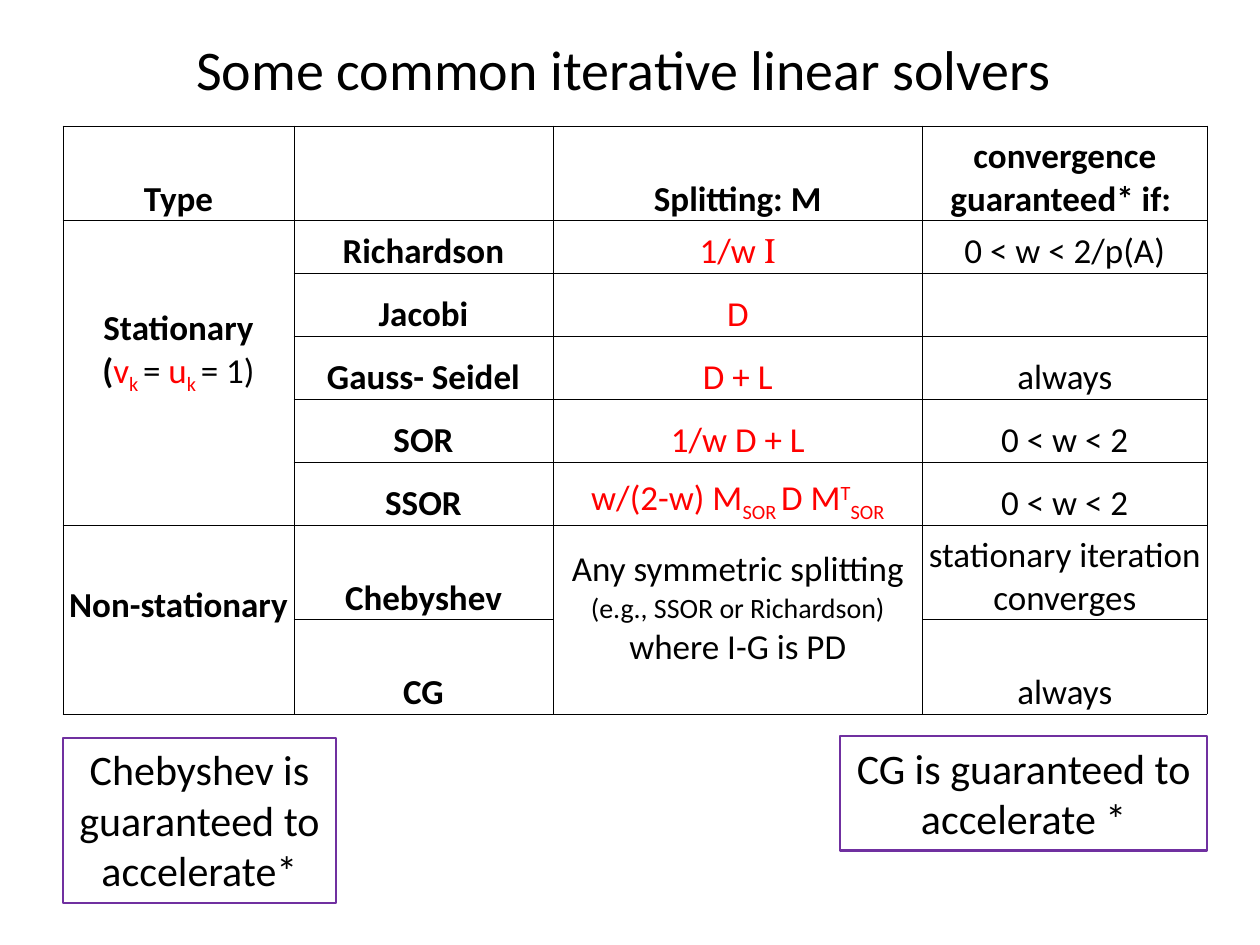
"""Build a slide that compares common iterative linear solvers."""
from lxml import etree
from pptx import Presentation
from pptx import util as u
from pptx.dml.color import RGBColor
from pptx.enum import shapes, text
from pptx.oxml.ns import qn

COLORS = {"text": "000000", "math": "FF0000", "box": "7030A0", "border": "000000"}


class Deck:
    """Hold the style and the current slide."""

    font = "Calibri"

    def __init__(self, width, height):
        self.prs = Presentation()
        self.prs.slide_width, self.prs.slide_height = u.Pt(width), u.Pt(height)
        self.s = self.prs.slides.add_slide(self.prs.slide_layouts[5])

    def add_text(self, tf, paragraphs, size):
        """Fill a text frame with centred paragraphs of (text, options) runs."""
        tf.word_wrap = True
        for i, runs in enumerate(paragraphs):
            p = tf.add_paragraph() if i else tf.paragraphs[0]
            p.alignment = text.PP_ALIGN.CENTER
            for content, opts in runs:
                r = p.add_run()
                r.text = content
                r.font.name = opts.get("font", self.font)
                r.font.size = u.Pt(opts.get("size", size))
                r.font.bold = opts.get("bold", False)
                r.font.color.rgb = RGBColor.from_string(COLORS[opts.get("color", "text")])
                if "base" in opts:
                    r._r.get_or_add_rPr().set("baseline", str(opts["base"] * 1000))

    def title(self, content, x, y, w, h):
        """Place and fill the title placeholder."""
        sp = self.s.shapes.title
        sp.left, sp.top, sp.width, sp.height = map(u.Pt, (x, y, w, h))
        sp.text_frame.vertical_anchor = text.MSO_ANCHOR.MIDDLE
        self.add_text(sp.text_frame, [[(content, {})]], 32)

    def box(self, content, x, y, w, h):
        """Add an outlined note."""
        sp = self.s.shapes.add_shape(shapes.MSO_SHAPE.RECTANGLE, *map(u.Pt, (x, y, w, h)))
        sp.shadow.inherit = False
        sp.fill.background()
        sp.line.color.rgb = RGBColor.from_string(COLORS["box"])
        sp.line.width = u.Pt(1.25)
        tf = sp.text_frame
        tf.vertical_anchor = text.MSO_ANCHOR.TOP
        self.add_text(tf, [[(content, {})]], 24)
        tf.auto_size = text.MSO_AUTO_SIZE.SHAPE_TO_FIT_TEXT

    def border(self, cell):
        """Draw a thin line on every side of a cell."""
        tc_pr = cell._tc.get_or_add_tcPr()
        for i, side in enumerate(("a:lnL", "a:lnR", "a:lnT", "a:lnB")):
            ln = etree.Element(qn(side), w=str(u.Pt(0.5)))
            fill = etree.SubElement(ln, qn("a:solidFill"))
            etree.SubElement(fill, qn("a:srgbClr"), val=COLORS["border"])
            tc_pr.insert(i, ln)

    def table(self, rows, x, y, widths, heights, merges):
        """Add a bordered table; merges give first row, last row, column, bottom margin."""
        area = map(u.Pt, (x, y, sum(widths), sum(heights)))
        tbl = self.s.shapes.add_table(len(heights), len(widths), *area).table
        tbl.first_row = tbl.horz_banding = False
        for col, width in zip(tbl.columns, widths):
            col.width = u.Pt(width)
        for row, height, contents in zip(tbl.rows, heights, rows):
            row.height = u.Pt(height)
            for cell, paragraphs in zip(row.cells, contents):
                cell.fill.background()
                self.border(cell)
                cell.vertical_anchor = text.MSO_ANCHOR.BOTTOM
                cell.margin_left = cell.margin_right = cell.margin_top = u.Pt(0.75)
                cell.margin_bottom = 0
                self.add_text(cell.text_frame, paragraphs, 20)
        for first, last, col, margin in merges:
            tbl.cell(first, col).merge(tbl.cell(last, col))
            tbl.cell(first, col).margin_bottom = u.Pt(margin)


def line(content, **opts):
    """Return a cell of one paragraph with one run."""
    return [[(content, opts)]]


def bold(content):
    """Return a bold one-line cell."""
    return line(content, bold=True)


def formula(content):
    """Return a one-line formula cell."""
    return line(content, color="math")


def main():
    """Build and save the slide."""
    red = {"color": "math"}
    sub, sup = {**red, "base": -25}, {**red, "base": 30}
    stationary = [
        [("Stationary", {"bold": True})],
        [("(", {"bold": True}), ("v", red), ("k ", sub), ("= ", {}),
         ("u", red), ("k ", sub), ("= 1)", {})],
    ]
    richardson = [[("1/w ", red), ("I", {**red, "font": "TeX Gyre Bonum"})]]
    ssor = [[("w/(2-w) M", red), ("SOR ", sub), ("D M", red), ("T", sup), ("SOR", sub)]]
    symmetric = [
        [("Any symmetric splitting", {})],
        [("(e.g., SSOR or Richardson)", {"size": 16})],
        [("where I-G is PD", {})],
    ]
    rows = [
        [bold("Type"), [], bold("Splitting: M"), bold("convergence guaranteed* if: ")],
        [stationary, bold("Richardson"), richardson, line("0 < w < 2/p(A)")],
        [[], bold("Jacobi"), formula("D"), []],
        [[], bold("Gauss- Seidel"), formula("D + L"), line("always")],
        [[], bold("SOR"), formula("1/w D + L"), line("0 < w < 2")],
        [[], bold("SSOR"), ssor, line("0 < w < 2")],
        [bold("Non-stationary"), bold("Chebyshev"), symmetric,
         line("stationary iteration converges")],
        [[], bold("CG"), [], line("always")],
    ]
    deck = Deck(720, 540)
    deck.title("Some common iterative linear solvers ", 36, -6, 648, 90)
    deck.table(rows, 36, 72, [132, 148, 211.25, 162.5], [54, 30] + [36] * 4 + [54] * 2,
               [(1, 5, 0, 73), (6, 7, 0, 50), (6, 7, 2, 26)])
    deck.box("Chebyshev is guaranteed to accelerate*", 36, 421.5, 156, 94.5)
    deck.box("CG is guaranteed to accelerate *", 480, 420.5, 210, 65.5)
    deck.prs.save("out.pptx")


if __name__ == "__main__":
    main()
